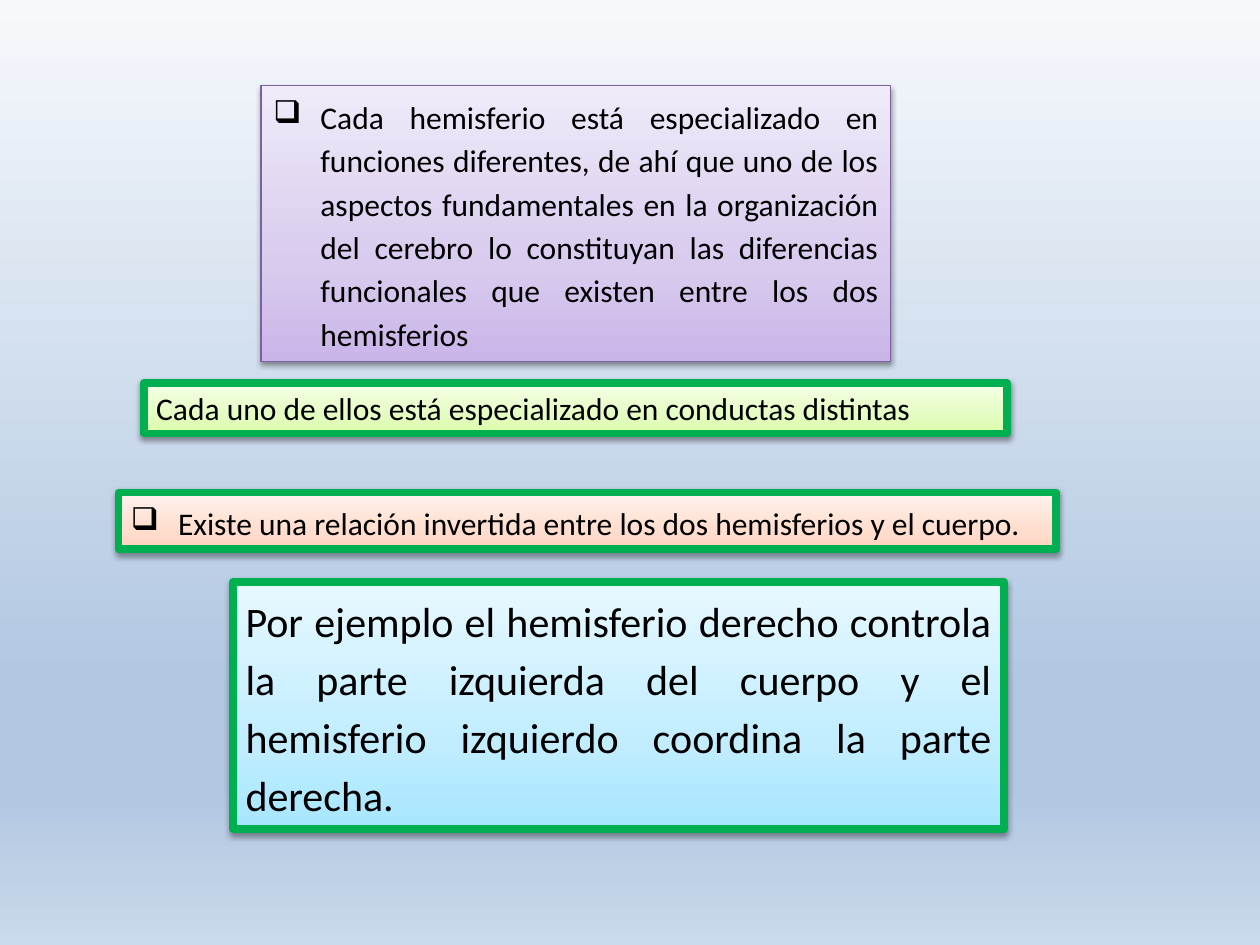
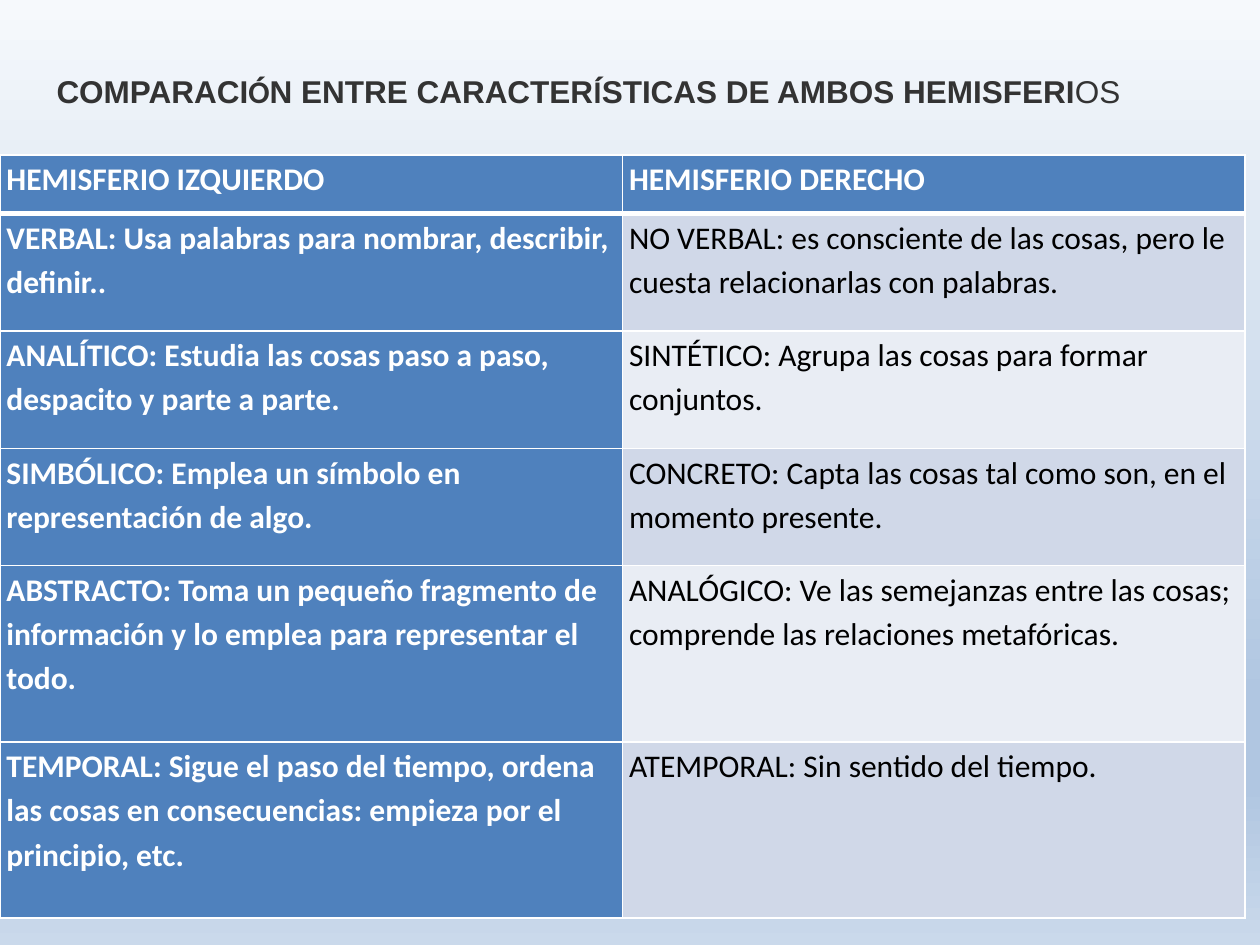
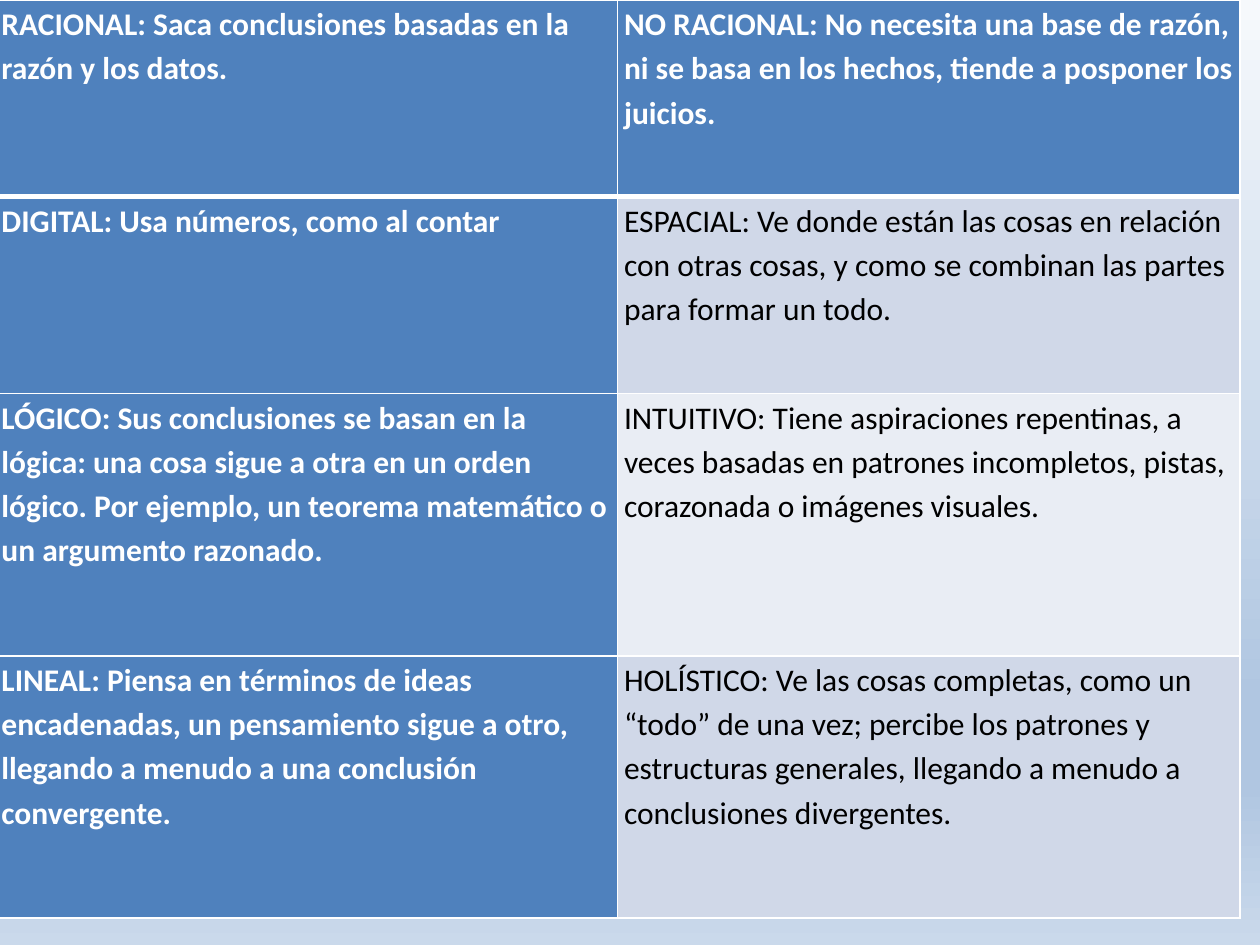
from dataclasses import dataclass

from lxml.etree import SubElement as Sub
from pptx import Presentation
from pptx.dml.color import RGBColor as RGB
from pptx.enum.text import MSO_ANCHOR as ANCHOR, MSO_AUTO_SIZE as AUTO, PP_ALIGN as ALIGN
from pptx.oxml.ns import qn
from pptx.util import Cm, Pt


@dataclass(frozen=True)
class Theme:
    body_font: str = "Calibri"
    title_font: str = "Arial"
    size: int = 18
    large: int = 24
    spacing: float = 1.15
    black: str = "000000"
    white: str = "FFFFFF"
    title: str = "333333"
    green: str = "00B050"
    purple: str = "7D60A0"
    head: str = "4F81BD"
    bands: tuple = ("D0D8E8", "E9EDF4")
    sky: tuple = ((0, "F6F9FC"), (74, "B0C6E1"), (83, "B0C6E1"), (100, "CAD9EB"))
    blue_fade: tuple = ((0, "A7E6FF"), (35, "C1EDFF"), (100, "E7F8FF"))
    purple_fade: tuple = ((0, "C9B5E8"), (35, "D8CBEE"), (100, "F0EAF9"))
    lime_fade: tuple = ((0, "DAFDA7"), (35, "E4FCC2"), (100, "F5FFE7"))
    orange_fade: tuple = ((0, "FFD2BD"), (35, "FFDED0"), (100, "FFF2ED"))


T = Theme()

TITLE_RUNS = [
    ("COMPARACI", T.title_font, True),
    ("Ó", T.body_font, True),
    ("N ENTRE CARACTER", T.title_font, True),
    ("Í", T.body_font, True),
    ("STICAS DE AMBOS HEMISFERI", T.title_font, True),
    ("OS", T.title_font, False),
]

FIRST_TRAITS = [
    ("HEMISFERIO IZQUIERDO", "HEMISFERIO DERECHO"),
    ("VERBAL: Usa palabras para nombrar, describir, definir..",
     "NO VERBAL: es consciente de las cosas, pero le cuesta relacionarlas con palabras."),
    ("ANALÍTICO: Estudia las cosas paso a paso, despacito y parte a parte.",
     "SINTÉTICO: Agrupa las cosas para formar conjuntos."),
    ("SIMBÓLICO: Emplea un símbolo en representación de algo.",
     "CONCRETO: Capta las cosas tal como son, en el momento presente."),
    ("ABSTRACTO: Toma un pequeño fragmento de información y lo emplea para representar el todo.",
     "ANALÓGICO: Ve las semejanzas entre las cosas; comprende las relaciones metafóricas."),
    ("TEMPORAL: Sigue el paso del tiempo, ordena las cosas en consecuencias: "
     "empieza por el principio, etc.",
     "ATEMPORAL: Sin sentido del tiempo."),
]

MORE_TRAITS = [
    ("RACIONAL: Saca conclusiones basadas en la razón y los datos.",
     "NO RACIONAL: No necesita una base de razón, ni se basa en los hechos, "
     "tiende a posponer los juicios."),
    ("DIGITAL: Usa números, como al contar",
     "ESPACIAL: Ve donde están las cosas en relación con otras cosas, "
     "y como se combinan las partes para formar un todo."),
    ("LÓGICO: Sus conclusiones se basan en la lógica: una cosa sigue a otra en un orden lógico. "
     "Por ejemplo, un teorema matemático o un argumento razonado.",
     "INTUITIVO: Tiene aspiraciones repentinas, a veces basadas en patrones incompletos, "
     "pistas, corazonada o imágenes visuales."),
    ("LINEAL: Piensa en términos de ideas encadenadas, un pensamiento sigue a otro, "
     "llegando a menudo a una conclusión convergente.",
     "HOLÍSTICO: Ve las cosas completas, como un “todo” de una vez; percibe los patrones y "
     "estructuras generales, llegando a menudo a conclusiones divergentes."),
]


def set_attrs(obj, values):
    for name, value in values.items():
        setattr(obj, name, value)


def add_run(p, text, color, size=T.size, font=T.body_font, bold=False):
    r = p.add_run()
    r.text = text
    set_attrs(r.font, {"name": font, "size": Pt(size), "bold": bold})
    r.font.color.rgb = RGB.from_string(color)


def add_color(parent, color):
    return Sub(parent, qn("a:srgbClr"), val=color)


def fade(fill, element, stops, angle):
    fill.gradient()
    fill.gradient_angle = angle
    gs_list = element.find(".//" + qn("a:gsLst"))
    for gs in list(gs_list):
        gs_list.remove(gs)
    for pos, color in stops:
        add_color(Sub(gs_list, qn("a:gs"), pos=str(pos * 1000)), color)


def add_shadow(sp):
    sp.shadow.inherit = False
    effects = sp.element.spPr.find(qn("a:effectLst"))
    shadow = Sub(effects, qn("a:outerShdw"), blurRad="40000", dist="20000",
                 dir="5400000", rotWithShape="0")
    Sub(add_color(shadow, T.black), qn("a:alpha"), val="38000")


def add_bullet(p):
    pPr = p._p.get_or_add_pPr()
    set_attrs_xml = {"marL": Cm(0.95), "indent": -Cm(0.95)}
    for name, value in set_attrs_xml.items():
        pPr.set(name, str(value))
    Sub(pPr, qn("a:buChar"), char="❑")


def add_text_box(s, box):
    sp = s.shapes.add_textbox(*map(Cm, box))
    set_attrs(sp.text_frame, {"word_wrap": True, "auto_size": AUTO.SHAPE_TO_FIT_TEXT})
    return sp


def add_card(s, box, text, stops, line=T.green, width=4.5, size=T.size,
             bullet=False, justify=True):
    sp = add_text_box(s, box)
    fade(sp.fill, sp.element, stops, 90)
    sp.line.color.rgb = RGB.from_string(line)
    sp.line.width = Pt(width)
    add_shadow(sp)
    p = sp.text_frame.paragraphs[0]
    if justify:
        set_attrs(p, {"alignment": ALIGN.JUSTIFY, "line_spacing": T.spacing})
    if bullet:
        add_bullet(p)
    add_run(p, text, T.black, size)


def add_title(s, box):
    tf = add_text_box(s, box).text_frame
    tf.vertical_anchor = ANCHOR.MIDDLE
    for text, font, bold in TITLE_RUNS:
        add_run(tf.paragraphs[0], text, T.title, font=font, bold=bold)


def set_borders(cell, row):
    widths = {"lnL": 1, "lnR": 1, "lnT": 3 if row == 1 else 1, "lnB": 3 if row == 0 else 1}
    tcPr = cell._tc.get_or_add_tcPr()
    for side, width in widths.items():
        ln = Sub(tcPr, qn("a:" + side), w=str(Pt(width)))
        add_color(Sub(ln, qn("a:solidFill")), T.white)


def add_traits_table(s, box, traits, row_lines):
    tbl = s.shapes.add_table(len(traits), 2, *map(Cm, box)).table
    tbl.first_col = True
    line_height = box[3] / sum(row_lines)
    for i, (pair, lines) in enumerate(zip(traits, row_lines)):
        tbl.rows[i].height = Cm(lines * line_height)
        for j, text in enumerate(pair):
            cell = tbl.cell(i, j)
            strong = i == 0 or j == 0
            set_attrs(cell, {"margin_left": Cm(0.13), "margin_right": Cm(0.13),
                             "margin_top": 0, "margin_bottom": 0})
            set_borders(cell, i)
            cell.fill.solid()
            cell.fill.fore_color.rgb = RGB.from_string(T.head if strong else T.bands[(i - 1) % 2])
            p = cell.text_frame.paragraphs[0]
            p.line_spacing = T.spacing
            add_run(p, text, T.white if strong else T.black, bold=strong)


def build_specialization(s):
    add_card(s, (4.7, 11.73, 15.54, 4.98),
             "Por ejemplo el hemisferio derecho controla la parte izquierda del cuerpo y el "
             "hemisferio izquierdo coordina la parte derecha.",
             T.blue_fade, size=T.large)
    add_card(s, (5.26, 1.73, 12.7, 5.56),
             "Cada hemisferio está especializado en funciones diferentes, de ahí que uno de los "
             "aspectos fundamentales en la organización del cerebro lo constituyan las "
             "diferencias funcionales que existen entre los dos hemisferios",
             T.purple_fade, line=T.purple, width=0.75, bullet=True)
    add_card(s, (2.9, 7.72, 17.4, 1.02),
             "Cada uno de ellos está especializado en conductas distintas",
             T.lime_fade, justify=False)
    add_card(s, (2.39, 9.93, 18.9, 1.14),
             "Existe una relación invertida entre los dos hemisferios y el cuerpo.",
             T.orange_fade, bullet=True)


def build_comparison(s):
    add_traits_table(s, (0, 3.12, 25.1, 15.39), FIRST_TRAITS, (1, 2, 2, 2, 3, 3))
    add_title(s, (0.89, 1.32, 23.01, 1.02))


def build_comparison_end(s):
    add_traits_table(s, (-0.1, 0, 25.1, 18.51), MORE_TRAITS, (3, 3, 4, 4))


def main():
    prs = Presentation()
    set_attrs(prs, {"slide_width": Cm(25.4), "slide_height": Cm(19.05)})
    master = prs.slide_master
    fade(master.background.fill, master.element, T.sky, 270)
    for build in (build_specialization, build_comparison, build_comparison_end):
        build(prs.slides.add_slide(prs.slide_layouts[6]))
    prs.save("out.pptx")


if __name__ == "__main__":
    main()
